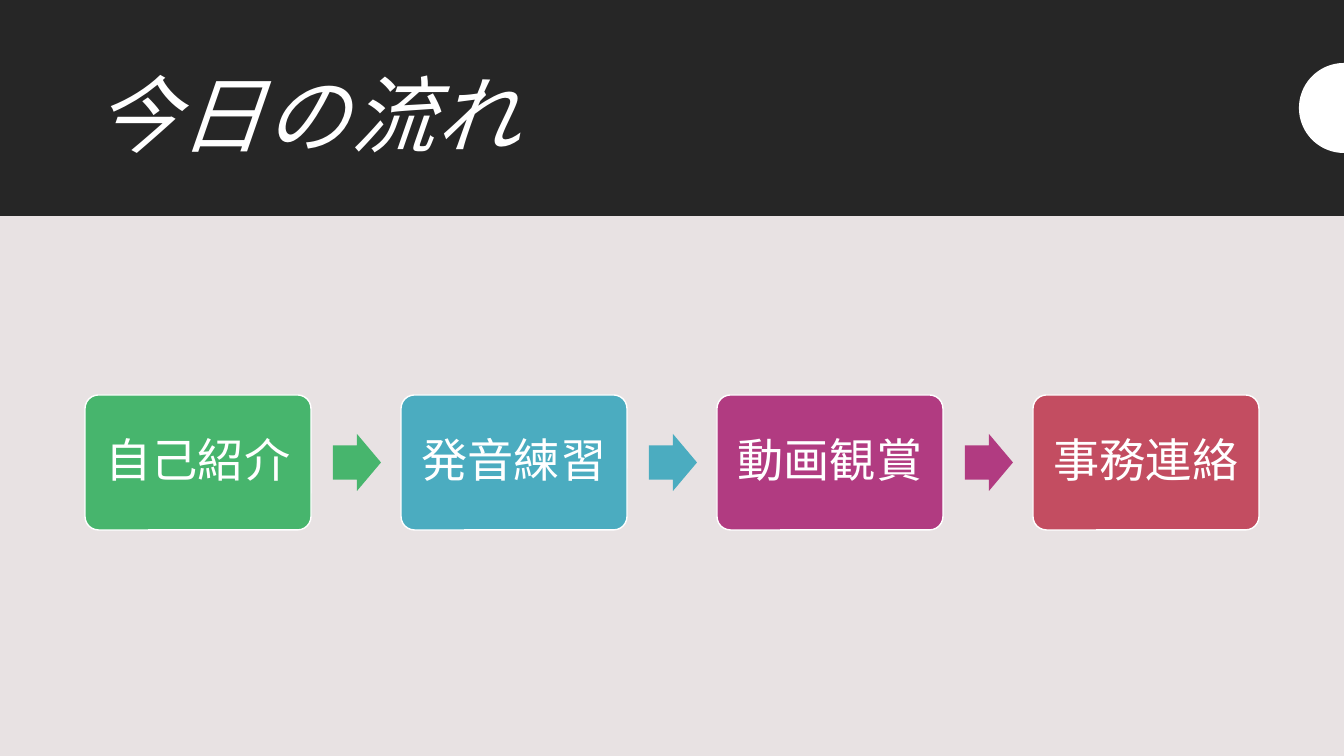
import math
from pptx import Presentation
from pptx.dml.color import RGBColor
from pptx.enum import shapes, text
from pptx.util import Pt

SCALE = 914400 / 100.8
HUES = {"page": "E8E2E3", "band": "262626", "white": "FFFFFF",
        "green": "47B56D", "blue": "4BACC0", "plum": "B13B81", "red": "C34D61"}
STEPS = [("自己紹介", "green"), ("発音練習", "blue"),
         ("動画観賞", "plum"), ("事務連絡", "red")]
LEFT, PITCH = 85, 316
KIND = shapes.MSO_SHAPE


def emu(px):
    return round(px * SCALE)


def hue(name):
    return RGBColor.from_string(HUES[name])


def paint(shape, fill, line=None):
    shape.shadow.inherit = False
    shape.fill.solid()
    shape.fill.fore_color.rgb = hue(fill)
    if line:
        shape.line.color.rgb = hue(line)
        shape.line.width = Pt(1)
    else:
        shape.line.fill.background()


def block(slide, kind, box, fill, line=None, adjust=()):
    shape = slide.shapes.add_shape(kind, *map(emu, box))
    for i, value in enumerate(adjust):
        shape.adjustments[i] = value
    paint(shape, fill, line)
    return shape


def write(shape, words, size, font, align):
    frame = shape.text_frame
    frame.word_wrap = True
    frame.auto_size = text.MSO_AUTO_SIZE.NONE
    frame.vertical_anchor = text.MSO_ANCHOR.MIDDLE
    para = frame.paragraphs[0]
    para.alignment = align
    para.line_spacing = 0.9
    run = para.add_run()
    run.text = words
    run.font.size = Pt(size)
    run.font.name = font
    run.font.color.rgb = hue("white")
    return run


def head(slide):
    title = slide.shapes.title
    title.left, title.top, title.width, title.height = map(emu, (84, 46, 1176, 146))
    run = write(title, "今日の流れ", 60, "Lato", text.PP_ALIGN.LEFT)
    run.font.italic = True
    run.font._element.set("spc", "100")
    band = block(slide, KIND.RECTANGLE, (0, 0, 1344, 216), "band")
    title._element.addprevious(band._element)


def notch(slide, x, y, radius):
    """Draw the left half of a disc centred on the slide's right edge."""
    turns = [math.pi * (0.5 + i / 48) for i in range(49)]
    dots = [(emu(x + radius * math.cos(a)), emu(y - radius * math.sin(a)))
            for a in turns]
    path = slide.shapes.build_freeform(*dots[0])
    path.add_line_segments(dots[1:], close=True)
    paint(path.convert_to_shape(), "white")


def flow(slide):
    for i, (words, fill) in enumerate(STEPS):
        x = LEFT + i * PITCH
        card = block(slide, KIND.ROUNDED_RECTANGLE, (x, 395, 226, 135),
                     fill, "white", (0.1,))
        frame = card.text_frame
        frame.margin_left = frame.margin_right = emu(14)
        frame.margin_top = frame.margin_bottom = emu(14)
        write(card, words, 33, "Arial", text.PP_ALIGN.CENTER)
        if i < len(STEPS) - 1:
            block(slide, KIND.RIGHT_ARROW, (x + 248, 434, 48, 57),
                  fill, adjust=(0.6, 0.5))


def main():
    deck = Presentation()
    deck.slide_width, deck.slide_height = emu(1344), emu(756)
    slide = deck.slides.add_slide(deck.slide_layouts[5])
    back = slide.background.fill
    back.solid()
    back.fore_color.rgb = hue("page")
    head(slide)
    notch(slide, 1344, 108, 45)
    flow(slide)
    deck.save("out.pptx")


if __name__ == "__main__":
    main()
